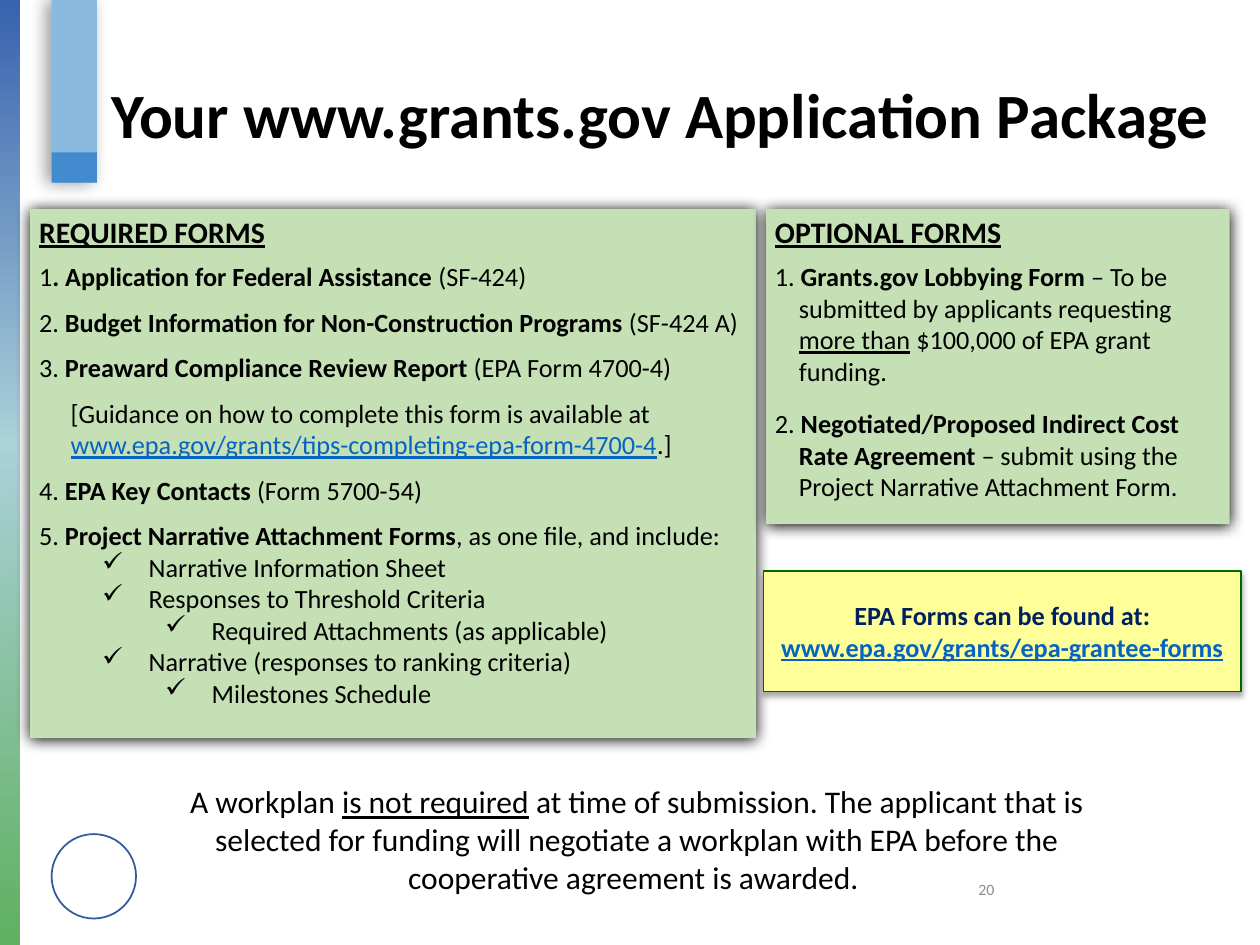
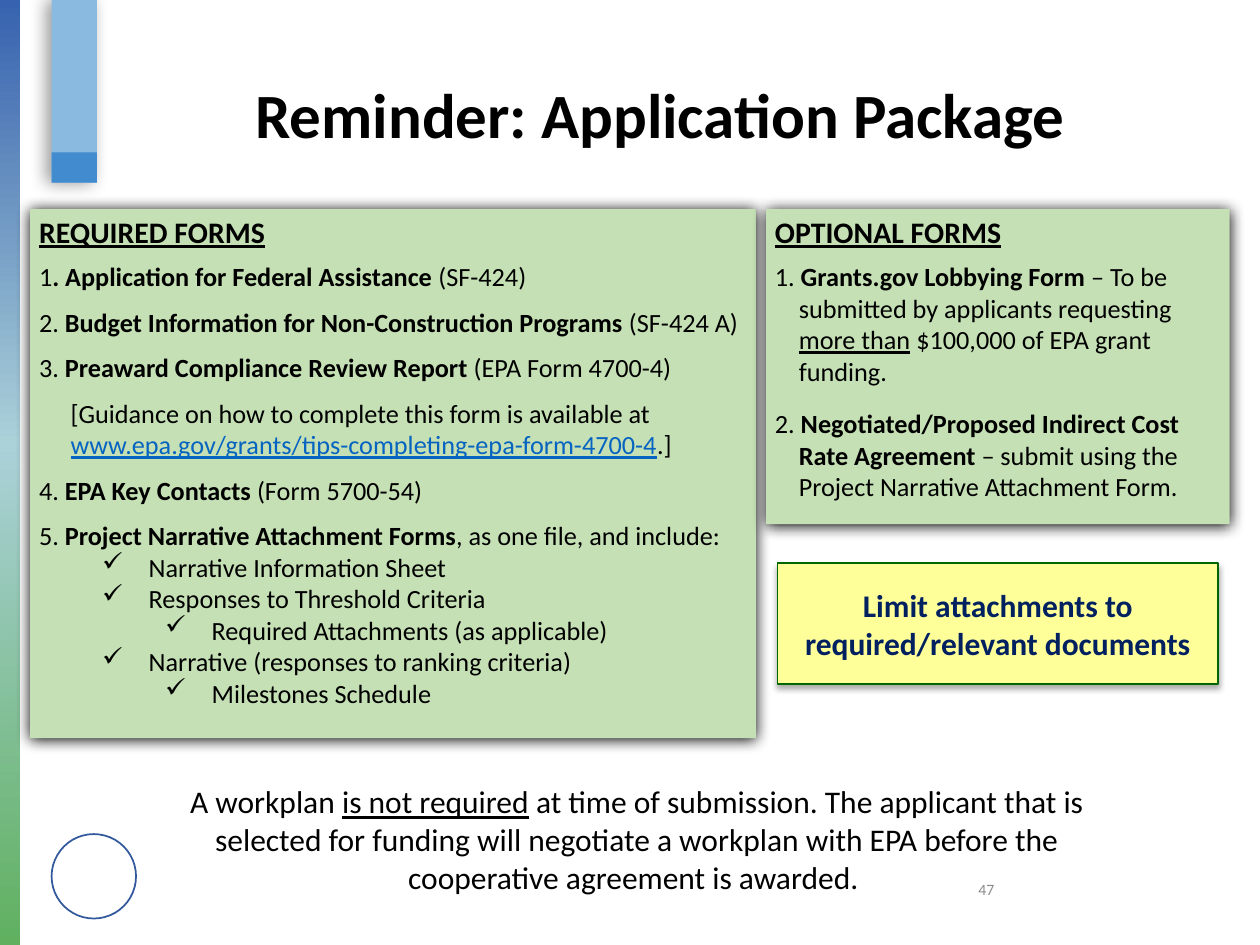
from dataclasses import dataclass
from typing import NamedTuple, Optional

import lxml.etree
import pptx
import pptx.dml.color
import pptx.enum.shapes
import pptx.enum.text
import pptx.oxml.ns
import pptx.util
from pptx.util import Inches

RGBColor = pptx.dml.color.RGBColor
Kind = pptx.enum.shapes.MSO_SHAPE
Align = pptx.enum.text.PP_ALIGN
Anchor = pptx.enum.text.MSO_ANCHOR
qn = pptx.oxml.ns.qn

# Shared look
FONT = "Calibri"
BLACK = RGBColor(0x00, 0x00, 0x00)
WHITE = RGBColor(0xFF, 0xFF, 0xFF)
GREY = RGBColor(0x8C, 0x8C, 0x8C)
LINK_BLUE = RGBColor(0x05, 0x63, 0xC1)
NAVY = RGBColor(0x00, 0x20, 0x60)
PANEL_GREEN = RGBColor(0xC5, 0xE0, 0xB4)
NOTE_YELLOW = RGBColor(0xFF, 0xFF, 0x99)
NOTE_BORDER = RGBColor(0x00, 0x66, 0x00)
TAB_LIGHT = RGBColor(0x8B, 0xBA, 0xE1)
TAB_DARK = RGBColor(0x42, 0x8B, 0xCE)
RING_BLUE = RGBColor(0x33, 0x59, 0x9D)
EDGE_STOPS = (
    (0, RGBColor(0x37, 0x62, 0xAF)),
    (47, RGBColor(0xAB, 0xD1, 0xD9)),
    (100, RGBColor(0x60, 0xB0, 0x60)),
)


class Area(NamedTuple):
    left: float
    top: float
    width: float
    height: float

    def lengths(self) -> tuple:
        return tuple(Inches(value) for value in self)


class Shadow(NamedTuple):
    opacity: int
    blur: float
    distance: float
    angle: int


class Span(NamedTuple):
    text: str
    bold: bool = False
    underline: bool = False
    color: RGBColor = BLACK


@dataclass
class Line:
    spans: list
    size: float = 15
    after: float = 0
    left: float = 0
    first: float = 0
    level: int = 0
    bullet: str = ""
    align: Optional[Align] = None


@dataclass
class PackagePage:
    title: str
    number: str
    note_area: Area
    note: Line


TAB_SHADOW = Shadow(40, 10, 3, 180)
PANEL_SHADOW = Shadow(100, 8.5, 1, 90)
NOTE_SHADOW = Shadow(32, 3.5, 2.2, 90)


def heading(text: str) -> Line:
    return Line([Span(text, bold=True, underline=True)], size=17, after=6)


def item(lead: str, name: str, rest: str, hang: float = 0, after: float = 8) -> Line:
    spans = [Span(lead), Span(name, bold=True), Span(rest)]
    return Line(spans, after=after, left=hang, first=-hang)


def check(text: str, level: int) -> Line:
    return Line([Span(text)], left=0.37 + 0.5 * level, first=-0.37, level=level, bullet="✓")


# Content of both pages
REQUIRED_FORMS = [
    heading("REQUIRED FORMS"),
    item("1", ". Application for Federal Assistance ", "(SF-424)"),
    item("2. ", "Budget Information for Non-Construction Programs ", "(SF-424 A)", 0.31),
    item("3. ", "Preaward Compliance Review Report ", "(EPA Form 4700-4)", 0.25),
    Line([
        Span("[Guidance on how to complete this form is available at "),
        Span("www.epa.gov/grants/tips-completing-epa-form-4700-4",
             underline=True, color=LINK_BLUE),
        Span(".]"),
    ], after=8, left=0.25),
    item("4. ", "EPA Key Contacts ", "(Form 5700-54)"),
    item("5. ", "Project Narrative Attachment Forms", ", as one file, and include:", 0.32, 0),
    check("Narrative Information Sheet", 1),
    check("Responses to Threshold Criteria", 1),
    check("Required Attachments (as applicable)", 2),
    check("Narrative (responses to ranking criteria)", 1),
    check("Milestones Schedule", 2),
]

lobbying_form = item("1. ", "Grants.gov Lobbying Form ",
                     "– To be submitted by applicants requesting ", 0.19, 12)
lobbying_form.spans += [Span("more than", underline=True),
                        Span(" $100,000 of EPA grant funding.")]
OPTIONAL_FORMS = [
    heading("OPTIONAL FORMS"),
    lobbying_form,
    item("2. ", "Negotiated/Proposed Indirect Cost Rate Agreement",
         " – submit using the Project Narrative Attachment Form.", 0.19, 6),
]

WORKPLAN = Line([
    Span("A workplan "),
    Span("is not required", underline=True),
    Span(" at time of submission. The applicant that is selected for funding will "
         "negotiate a workplan with EPA before the cooperative agreement is awarded. "),
], size=18, align=Align.CENTER)

PAGES = [
    PackagePage(
        "Your www.grants.gov Application Package", "20", Area(6.06, 4.53, 3.79, 0.96),
        Line([Span("EPA Forms can be found at: ", bold=True, color=NAVY),
              Span("www.epa.gov/grants/epa-grantee-forms", True, True, LINK_BLUE)],
             align=Align.CENTER)),
    PackagePage(
        "Reminder: Application Package", "47", Area(6.17, 4.47, 3.5, 0.96),
        Line([Span("Limit attachments to required/relevant documents", bold=True, color=NAVY)],
             size=18, align=Align.CENTER)),
]


# Drawing helpers
def add_color(parent, color: RGBColor):
    return lxml.etree.SubElement(parent, qn("a:srgbClr"), val=str(color))


def add_shadow(shape, shadow: Shadow) -> None:
    effects = shape.element.spPr.find(qn("a:effectLst"))
    outer = lxml.etree.SubElement(
        effects, qn("a:outerShdw"), blurRad=str(pptx.util.Pt(shadow.blur)),
        dist=str(pptx.util.Pt(shadow.distance)), dir=str(shadow.angle * 60000),
        rotWithShape="0")
    color = add_color(outer, BLACK)
    lxml.etree.SubElement(color, qn("a:alpha"), val=str(shadow.opacity * 1000))


def add_block(page, area: Area, fill: Optional[RGBColor], border: Optional[RGBColor] = None,
              shadow: Optional[Shadow] = None, kind=Kind.RECTANGLE):
    shape = page.shapes.add_shape(kind, *area.lengths())
    shape.shadow.inherit = False
    if fill is not None:
        shape.fill.solid()
        shape.fill.fore_color.rgb = fill
    if border is None:
        shape.line.fill.background()
    else:
        shape.line.color.rgb = border
        shape.line.width = pptx.util.Pt(1)
    if shadow is not None:
        add_shadow(shape, shadow)
    return shape


def write_line(para, line: Line) -> None:
    para.alignment = line.align or Align.LEFT
    para.level = line.level
    para.space_after = pptx.util.Pt(line.after)
    properties = para._p.get_or_add_pPr()
    properties.set("marL", str(Inches(line.left)))
    properties.set("indent", str(Inches(line.first)))
    if line.bullet:
        lxml.etree.SubElement(properties, qn("a:buChar"), char=line.bullet)
    for part in line.spans:
        span = para.add_run()
        span.text = part.text
        span.font.name = FONT
        span.font.size = pptx.util.Pt(line.size)
        span.font.bold = part.bold
        span.font.underline = part.underline
        span.font.color.rgb = part.color


def write_lines(frame, lines: list, anchor: Anchor = Anchor.TOP) -> None:
    frame.word_wrap = True
    frame.vertical_anchor = anchor
    for index, line in enumerate(lines):
        write_line(frame.add_paragraph() if index else frame.paragraphs[0], line)


def add_text(page, area: Area, line: Line, anchor: Anchor = Anchor.TOP):
    box = page.shapes.add_textbox(*area.lengths())
    write_lines(box.text_frame, [line], anchor)
    return box


def add_panel(page, area: Area, lines: list) -> None:
    frame = add_block(page, area, PANEL_GREEN, shadow=PANEL_SHADOW).text_frame
    frame.margin_left = frame.margin_right = Inches(0.07)
    frame.margin_top = frame.margin_bottom = Inches(0.04)
    write_lines(frame, lines)


def add_decoration(page) -> None:
    # Tab above the title
    add_block(page, Area(0.41, 0, 0.36, 1.45), TAB_LIGHT, shadow=TAB_SHADOW)
    add_block(page, Area(0.41, 1.21, 0.36, 0.24), TAB_DARK)
    # Gradient strip along the left edge
    edge = add_block(page, Area(-3.67, 3.67, 7.5, 0.16), None)
    edge.rotation = 90
    edge.fill.gradient()
    edge.fill.gradient_angle = 0
    stops = edge.element.spPr.find(qn("a:gradFill")).find(qn("a:gsLst"))
    for stop in list(stops):
        stops.remove(stop)
    for position, color in EDGE_STOPS:
        add_color(lxml.etree.SubElement(stops, qn("a:gs"), pos=str(position * 1000)), color)
    # Ring in the bottom corner
    add_block(page, Area(0.41, 6.62, 0.67, 0.67), WHITE, RING_BLUE, kind=Kind.OVAL)


def set_title(page, text: str) -> None:
    title = page.shapes.title
    title.left, title.top, title.width, title.height = Area(0.51, 0.21, 9.46, 1.45).lengths()
    line = Line([Span(text, bold=True)], size=36, align=Align.CENTER)
    write_lines(title.text_frame, [line], Anchor.MIDDLE)
    title.text_frame.paragraphs[0].line_spacing = 0.9


def build_page(deck, content: PackagePage) -> None:
    page = deck.slides.add_slide(deck.slide_layouts[5])
    add_decoration(page)
    set_title(page, content.title)
    add_panel(page, Area(0.24, 1.66, 5.76, 4.2), REQUIRED_FORMS)
    add_panel(page, Area(6.08, 1.66, 3.68, 2.5), OPTIONAL_FORMS)
    workplan = add_text(page, Area(1, 6.16, 8.11, 1.01), WORKPLAN)
    workplan.text_frame.auto_size = pptx.enum.text.MSO_AUTO_SIZE.SHAPE_TO_FIT_TEXT
    number = Line([Span(content.number, color=GREY)], size=9, align=Align.RIGHT)
    add_text(page, Area(5.74, 6.86, 2.25, 0.4), number, Anchor.MIDDLE)
    note = add_block(page, content.note_area, NOTE_YELLOW, NOTE_BORDER, NOTE_SHADOW)
    write_lines(note.text_frame, [content.note], Anchor.MIDDLE)


def main() -> None:
    deck = pptx.Presentation()
    deck.slide_width, deck.slide_height = Inches(10), Inches(7.5)
    for content in PAGES:
        build_page(deck, content)
    deck.save("out.pptx")


if __name__ == "__main__":
    main()
